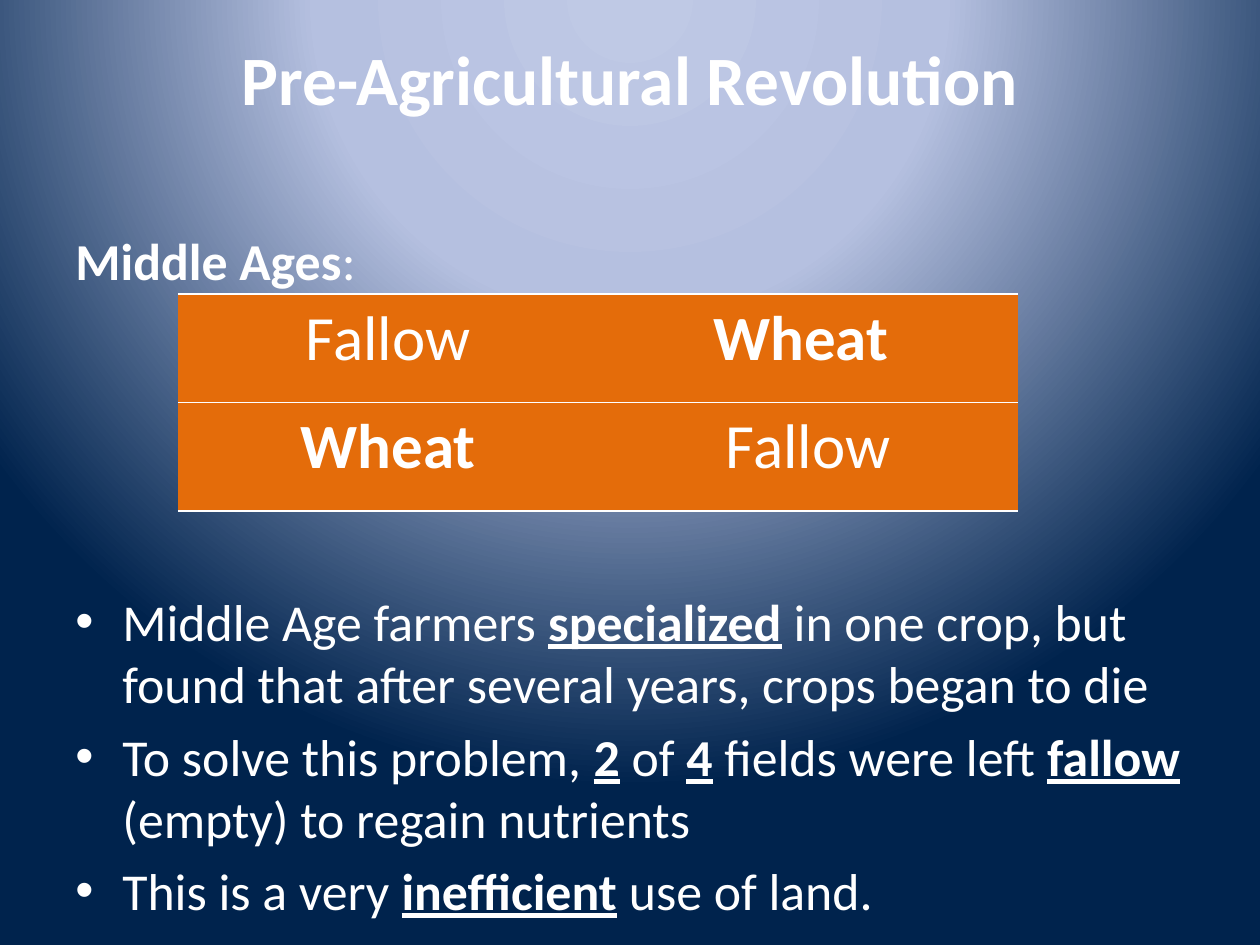
from dataclasses import dataclass

from lxml.etree import SubElement
from pptx import Presentation
from pptx.dml.color import RGBColor
from pptx.enum.text import MSO_ANCHOR as Anchor, PP_ALIGN as Align
from pptx.oxml.ns import qn
from pptx.util import Pt

EMU_PER_PX = 914400 // 126
FONT = "Calibri"
COLORS = {
    "text": "FFFFFF",
    "field": "E46C0A",
    "rule": "FFFFFF",
    "glow": "BFC9E5",
    "halo": "B5C0E0",
    "navy": "00234D",
}


@dataclass(frozen=True)
class Span:
    text: str
    bold: bool = False
    underline: bool = False


@dataclass(frozen=True)
class Box:
    left: int
    top: int
    width: int
    height: int

    def emu(self) -> list[int]:
        return [px(n) for n in (self.left, self.top, self.width, self.height)]


def px(length: int) -> int:
    return length * EMU_PER_PX


def key(word: str) -> Span:
    return Span(word, bold=True, underline=True)


def add_spans(paragraph, spans: list[Span], size: float) -> None:
    for span in spans:
        run = paragraph.add_run()
        run.text = span.text
        font = run.font
        font.name, font.size = FONT, Pt(size)
        font.bold, font.underline = span.bold, span.underline
        font.color.rgb = RGBColor.from_string(COLORS["text"])


def add_text_frame(slide, box: Box):
    frame = slide.shapes.add_textbox(*box.emu()).text_frame
    frame.word_wrap = True
    return frame


def set_bullet(paragraph, indent: int) -> None:
    props = paragraph._p.get_or_add_pPr()
    props.set("marL", str(px(indent)))
    props.set("indent", str(-px(indent)))
    SubElement(props, qn("a:buFont"), typeface="Arial")
    SubElement(props, qn("a:buChar"), char="•")


def set_border(cell, side: str, points: float) -> None:
    line = SubElement(cell._tc.get_or_add_tcPr(), qn(f"a:ln{side}"), w=str(Pt(points)))
    if points:
        fill = SubElement(line, qn("a:solidFill"))
        SubElement(fill, qn("a:srgbClr"), val=COLORS["rule"])
    else:
        SubElement(line, qn("a:noFill"))


def paint_background(slide, stops: list[tuple[int, str]]) -> None:
    slide.background.fill.gradient()
    gradient = next(slide.element.iter(qn("a:gradFill")))
    for child in list(gradient):
        gradient.remove(child)
    stop_list = SubElement(gradient, qn("a:gsLst"))
    for percent, name in stops:
        stop = SubElement(stop_list, qn("a:gs"), pos=str(percent * 1000))
        SubElement(stop, qn("a:srgbClr"), val=COLORS[name])
    circle = SubElement(gradient, qn("a:path"), path="circle")
    SubElement(circle, qn("a:fillToRect"), l="50000", t="-80000", r="50000", b="180000")


def add_fields(slide, box: Box, rows: list[list[Span]]) -> None:
    fields = slide.shapes.add_table(len(rows), len(rows[0]), *box.emu()).table
    fields.first_row = fields.horz_banding = False
    for r, row in enumerate(rows):
        for c, crop in enumerate(row):
            cell = fields.cell(r, c)
            for side, points in (("L", 0), ("R", 0), ("T", 1), ("B", 1)):
                set_border(cell, side, points)
            cell.fill.solid()
            cell.fill.fore_color.rgb = RGBColor.from_string(COLORS["field"])
            paragraph = cell.text_frame.paragraphs[0]
            paragraph.alignment = Align.CENTER
            add_spans(paragraph, [crop], 36)


FIELDS = [
    [Span("Fallow"), Span("Wheat ", bold=True)],
    [Span("Wheat", bold=True), Span("Fallow")],
]
POINTS = [
    [Span("Middle Age farmers "), key("specialized"),
     Span(" in one crop, but found that after several years, crops began to die")],
    [Span("To solve this problem, "), key("2"), Span(" of "), key("4"),
     Span(" fields were left "), key("fallow"), Span(" (empty) to regain nutrients")],
    [Span("This is a very "), key("inefficient"), Span(" use of land.")],
]
BODY_SIZE = 29.6
TABLE_GAP = 170.5  # points between the heading and the first bullet


def main() -> None:
    deck = Presentation()
    deck.slide_width, deck.slide_height = px(1260), px(945)
    slide = deck.slides.add_slide(deck.slide_layouts[6])
    paint_background(slide, [(0, "glow"), (40, "halo"), (100, "navy")])

    # Title
    title = add_text_frame(slide, Box(63, 36, 1134, 157))
    title.margin_top = 0
    title.vertical_anchor = Anchor.TOP
    title.paragraphs[0].alignment = Align.CENTER
    add_spans(title.paragraphs[0], [Span("Pre-Agricultural Revolution", bold=True)], 39.6)

    # Heading and bullets, leaving room for the table
    body = add_text_frame(slide, Box(63, 223, 1134, 624))
    add_spans(body.paragraphs[0], [Span("Middle Ages", bold=True), Span(":")], BODY_SIZE)
    for i, point in enumerate(POINTS):
        paragraph = body.add_paragraph()
        paragraph.space_before = Pt(5.9 if i else TABLE_GAP)
        set_bullet(paragraph, 47)
        add_spans(paragraph, point, BODY_SIZE)

    # Crop fields
    add_fields(slide, Box(178, 294, 840, 217), FIELDS)

    deck.save("out.pptx")


if __name__ == "__main__":
    main()
